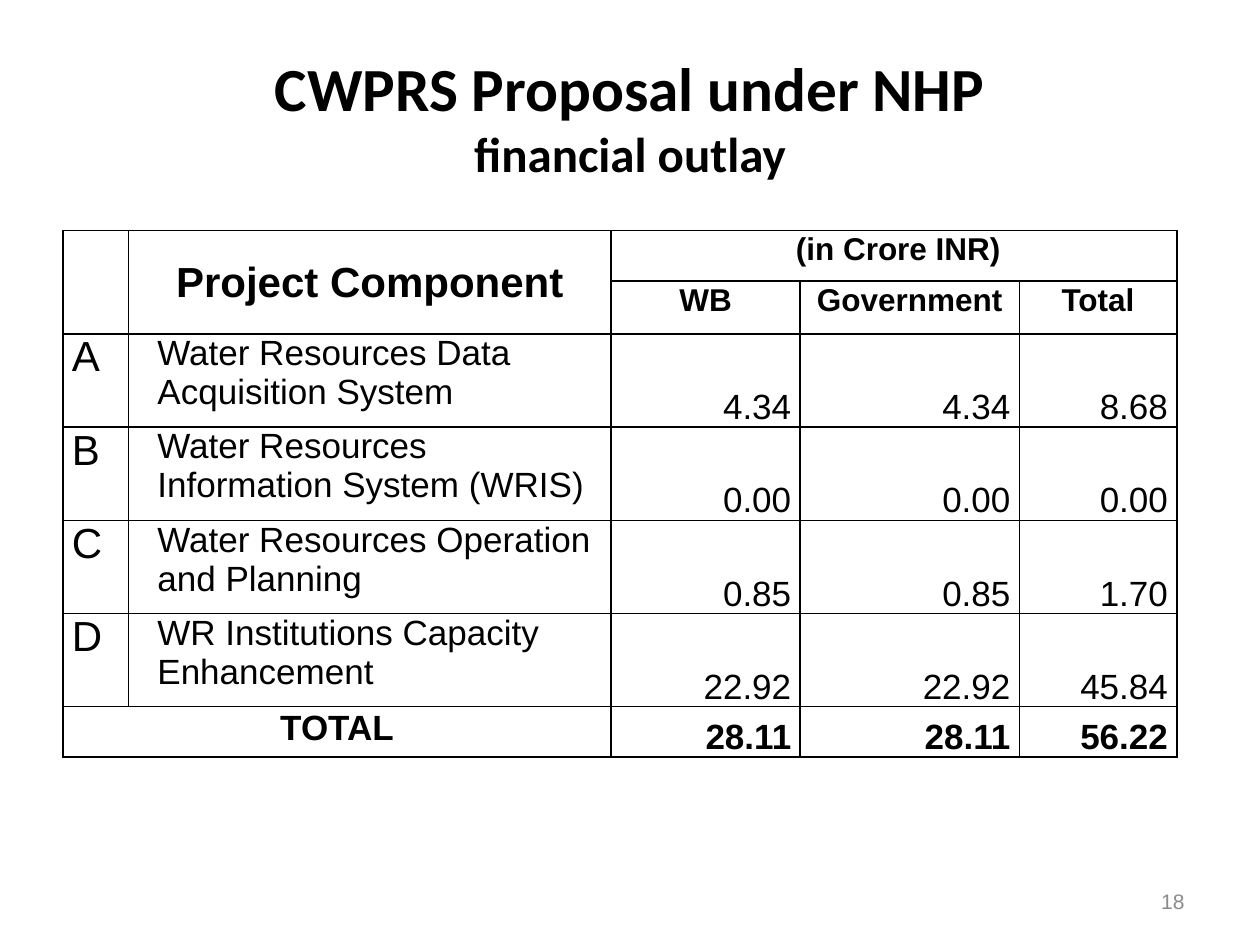
from lxml.etree import SubElement
from pptx import Presentation
from pptx.dml.color import RGBColor
from pptx.enum.text import MSO_ANCHOR as Anchor, PP_ALIGN as Align
from pptx.oxml.ns import qn
from pptx.util import Inches, Pt

BLACK = RGBColor(0x00, 0x00, 0x00)
GRAY = RGBColor(0x8C, 0x8C, 0x8C)

COLUMN_WIDTHS = (0.52, 3.83, 1.5, 1.74, 1.25)
ROW_HEIGHTS = (0.4, 0.4, 0.74, 0.74, 0.74, 0.74, 0.4)
COMPONENTS = (
    ("A", "Water Resources Data Acquisition System", "4.34", "4.34", "8.68"),
    ("B", "Water Resources Information System (WRIS)", "0.00", "0.00", "0.00"),
    ("C", "Water Resources Operation and Planning", "0.85", "0.85", "1.70"),
    ("D", "WR Institutions Capacity Enhancement", "22.92", "22.92", "45.84"),
)
TOTALS = ("28.11", "28.11", "56.22")
HEADING = {"bold": True, "align": Align.CENTER, "line_spacing": 1.05, "space": 3}
LETTER = {"size": 24, "space": 3, "margin": 0.38, "indent": -0.38}
NAME = {"space": 3, "margin": 0.16}
AMOUNT = {"align": Align.RIGHT, "line_spacing": 1.05}


def write_text(frame, text, size=20, font="Arial", color=BLACK, bold=False,
               align=Align.LEFT, line_spacing=None, space=0, margin=0, indent=0,
               subtitle=None, subtitle_size=None):
    """Write one paragraph, with an optional second line in another size."""
    paragraph = frame.paragraphs[0]
    paragraph.alignment = align
    paragraph.line_spacing = line_spacing
    paragraph.space_before = paragraph.space_after = Pt(space)
    properties = paragraph._p.get_or_add_pPr()
    properties.set("marL", str(Inches(margin)))
    properties.set("indent", str(Inches(indent)))
    lines = [(text, size)]
    if subtitle:
        lines.append((subtitle, subtitle_size))
    for index, (line, line_size) in enumerate(lines):
        if index:
            paragraph.add_line_break()
        run = paragraph.add_run()
        run.text = line
        run.font.size = Pt(line_size)
        run.font.name = font
        run.font.bold = bold
        run.font.color.rgb = color


def add_text_box(slide, left, top, width, height, text, **text_format):
    """Add a wrapped, vertically centred text box."""
    shape = slide.shapes.add_textbox(
        Inches(left), Inches(top), Inches(width), Inches(height))
    frame = shape.text_frame
    frame.word_wrap = True
    frame.vertical_anchor = Anchor.MIDDLE
    write_text(frame, text, **text_format)


def style_cell(cell):
    """Give a cell narrow margins, thin black borders and no fill."""
    cell.margin_left = cell.margin_right = Inches(0.07)
    cell.margin_top = cell.margin_bottom = 0
    properties = cell._tc.get_or_add_tcPr()
    for side in ("lnL", "lnR", "lnT", "lnB"):
        line = SubElement(properties, qn(f"a:{side}"), w=str(Pt(1)))
        fill = SubElement(line, qn("a:solidFill"))
        SubElement(fill, qn("a:srgbClr"), val=str(BLACK))
    cell.fill.background()


def write_cell(cell, text, anchor=Anchor.TOP, **text_format):
    """Write text into a table cell."""
    cell.vertical_anchor = anchor
    write_text(cell.text_frame, text, **text_format)


def add_grid(slide):
    """Add the empty bordered table with its merged cells."""
    table = slide.shapes.add_table(
        len(ROW_HEIGHTS), len(COLUMN_WIDTHS), Inches(0.5), Inches(1.83),
        Inches(sum(COLUMN_WIDTHS)), Inches(sum(ROW_HEIGHTS))).table
    table.first_row = table.horz_banding = False
    for column, width in zip(table.columns, COLUMN_WIDTHS):
        column.width = Inches(width)
    for row, height in zip(table.rows, ROW_HEIGHTS):
        row.height = Inches(height)
        for cell in row.cells:
            style_cell(cell)
    for first, last in (((0, 0), (1, 0)), ((0, 1), (1, 1)),
                        ((0, 2), (0, 4)), ((6, 0), (6, 1))):
        table.cell(*first).merge(table.cell(*last))
    return table


def write_amounts(table, row, amounts, bold=False):
    """Write the three amounts of a row."""
    for column, amount in enumerate(amounts, start=2):
        write_cell(table.cell(row, column), amount, Anchor.BOTTOM,
                   bold=bold, **AMOUNT)


def add_outlay_table(slide):
    """Add the table of financial outlay by project component."""
    table = add_grid(slide)
    write_cell(table.cell(0, 1), "Project Component", Anchor.MIDDLE,
               size=24, **HEADING)
    write_cell(table.cell(0, 2), " (in Crore INR)", size=18, **HEADING)
    for column, heading in enumerate(("WB", "Government", "Total"), start=2):
        write_cell(table.cell(1, column), heading, size=18, **HEADING)
    for row, (letter, name, *amounts) in enumerate(COMPONENTS, start=2):
        write_cell(table.cell(row, 0), letter, **LETTER)
        write_cell(table.cell(row, 1), name, **NAME)
        write_amounts(table, row, amounts)
    write_cell(table.cell(6, 0), "TOTAL", **HEADING)
    write_amounts(table, 6, TOTALS, bold=True)


def main():
    """Build the slide and save the presentation."""
    presentation = Presentation()
    presentation.slide_width = Inches(10)
    presentation.slide_height = Inches(7.5)
    slide = presentation.slides.add_slide(presentation.slide_layouts[6])
    add_text_box(slide, 0.5, 0.3, 9, 1.25, "CWPRS Proposal under NHP",
                 size=35, font="Calibri", bold=True, align=Align.CENTER,
                 subtitle="financial outlay", subtitle_size=28)
    add_text_box(slide, 7.17, 6.95, 2.33, 0.4, "18",
                 size=12, color=GRAY, align=Align.RIGHT)
    add_outlay_table(slide)
    presentation.save("out.pptx")


if __name__ == "__main__":
    main()
